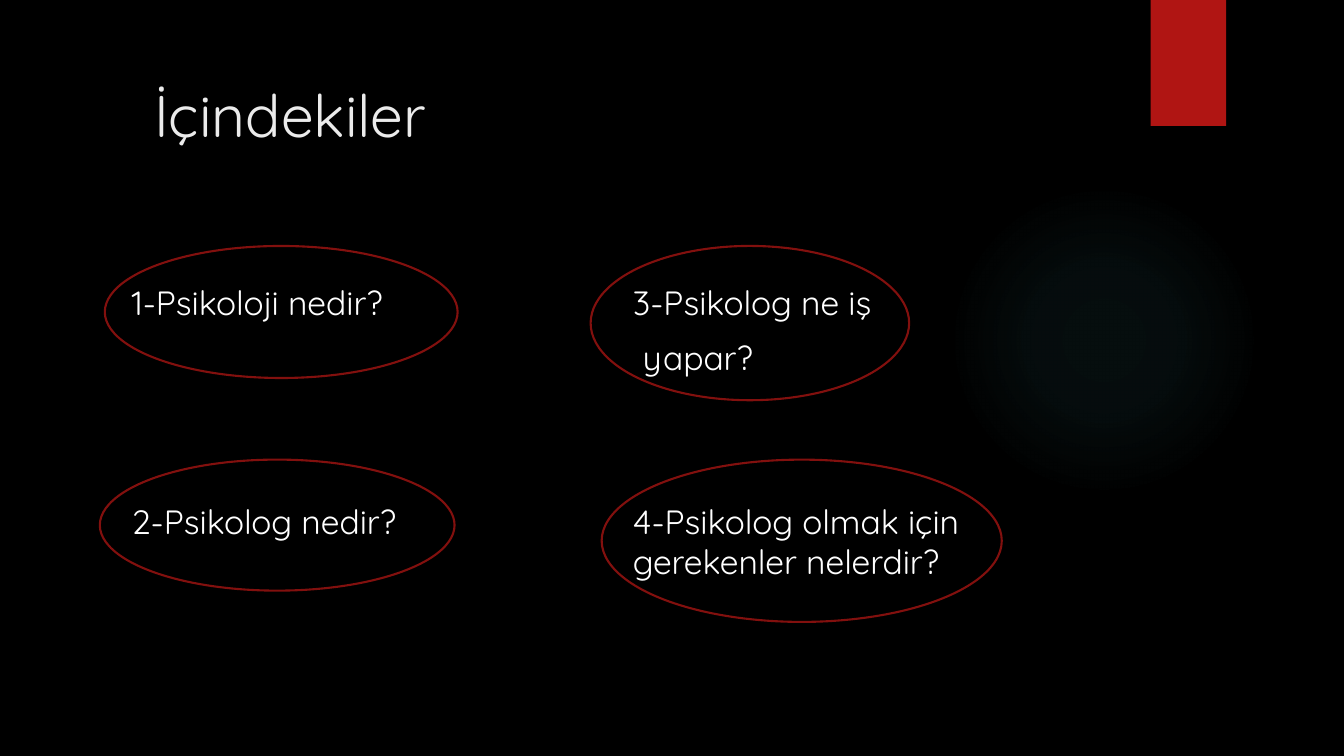
"""Build the contents slide with four circled topics."""
from pptx import Presentation
from pptx.dml.color import RGBColor
from pptx.enum.shapes import MSO_SHAPE
from pptx.oxml import parse_xml
from pptx.oxml.ns import nsdecls
from pptx.util import Pt

OVAL = MSO_SHAPE.OVAL
RECTANGLE = MSO_SHAPE.RECTANGLE
FONT = "Quicksand"
BLACK, RED, DARK_RED = "000000", "B01513", "82100E"
GLOW, TITLE_COLOR, WHITE = "50B9C1", "EBEBEB", "FFFFFF"

TITLE = "İçindekiler"
TOPICS = [
    {"column": 0, "row": 0, "lines": ["1-Psikoloji nedir?"],
     "ring": (74.9, 175.7, 252, 94.3)},
    {"column": 0, "row": 1, "lines": ["2-Psikolog nedir?"],
     "ring": (71.3, 328.3, 253.4, 93.6)},
    {"column": 1, "row": 0, "lines": ["3-Psikolog ne iş", "yapar?"],
     "ring": (421.9, 175.7, 227.5, 110.2)},
    {"column": 1, "row": 1, "lines": ["4-Psikolog olmak için gerekenler nelerdir?"],
     "ring": (429.8, 328.3, 285.8, 115.9)},
]
GLOW_STOPS = [(0, 7), (36, 6), (69, 0)]

COLUMN_LEFT, COLUMN_STEP, COLUMN_WIDTH = 87, 358, 346
ROW_TOP, ROW_STEP, ROW_HEIGHT = 198, 156, 80
SECOND_LINE_INDENT = 7


def rgb(value):
    return RGBColor.from_string(value)


def add_plain_shape(slide, kind, box):
    shape = slide.shapes.add_shape(kind, *map(Pt, box))
    shape.shadow.inherit = False
    shape.line.fill.background()
    return shape


def add_text(slide, box, lines, size, color):
    text_box = slide.shapes.add_textbox(*map(Pt, box))
    frame = text_box.text_frame
    frame.word_wrap = True
    for index, line in enumerate(lines):
        paragraph = frame.add_paragraph() if index else frame.paragraphs[0]
        paragraph.text = line
        if index:
            paragraph.space_before = Pt(10)
            paragraph._p.get_or_add_pPr().set("marL", str(Pt(SECOND_LINE_INDENT)))
        paragraph.font.name = FONT
        paragraph.font.size = Pt(size)
        paragraph.font.color.rgb = rgb(color)


def add_glow(slide):
    glow = add_plain_shape(slide, OVAL, (677.5, 131.8, 221.8, 221.8))
    stops = "".join(
        f'<a:gs pos="{position * 1000}"><a:srgbClr val="{GLOW}">'
        f'<a:alpha val="{alpha * 1000}"/></a:srgbClr></a:gs>'
        for position, alpha in GLOW_STOPS)
    glow._element.spPr.insert(2, parse_xml(
        f'<a:gradFill {nsdecls("a")}><a:gsLst>{stops}</a:gsLst><a:path path="circle">'
        '<a:fillToRect l="50000" t="50000" r="50000" b="50000"/></a:path></a:gradFill>'))


def add_ribbon(slide):
    ribbon = add_plain_shape(slide, RECTANGLE, (821.9, 0, 54, 90))
    ribbon.fill.solid()
    ribbon.fill.fore_color.rgb = rgb(RED)
    effects = ribbon._element.spPr.find(
        "{http://schemas.openxmlformats.org/drawingml/2006/main}effectLst")
    effects.append(parse_xml(
        f'<a:outerShdw {nsdecls("a")} blurRad="{Pt(3)}" dist="{Pt(2)}" dir="5400000" '
        f'rotWithShape="0"><a:srgbClr val="{BLACK}"><a:alpha val="45000"/>'
        '</a:srgbClr></a:outerShdw>'))


def add_ring(slide, box):
    ring = add_plain_shape(slide, OVAL, box)
    ring.fill.background()
    ring.line.color.rgb = rgb(DARK_RED)
    ring.line.width = Pt(1.5)


def main():
    presentation = Presentation()
    presentation.slide_width, presentation.slide_height = Pt(960), Pt(540)
    slide = presentation.slides.add_slide(presentation.slide_layouts[6])
    slide.background.fill.solid()
    slide.background.fill.fore_color.rgb = rgb(BLACK)

    add_glow(slide)
    add_ribbon(slide)
    add_text(slide, (103, 52.6, 741, 110), [TITLE], 42, TITLE_COLOR)
    for topic in TOPICS:
        left = COLUMN_LEFT + topic["column"] * COLUMN_STEP
        top = ROW_TOP + topic["row"] * ROW_STEP
        add_text(slide, (left, top, COLUMN_WIDTH, ROW_HEIGHT), topic["lines"], 24, WHITE)
    for topic in TOPICS:
        add_ring(slide, topic["ring"])

    presentation.save("out.pptx")


if __name__ == "__main__":
    main()
